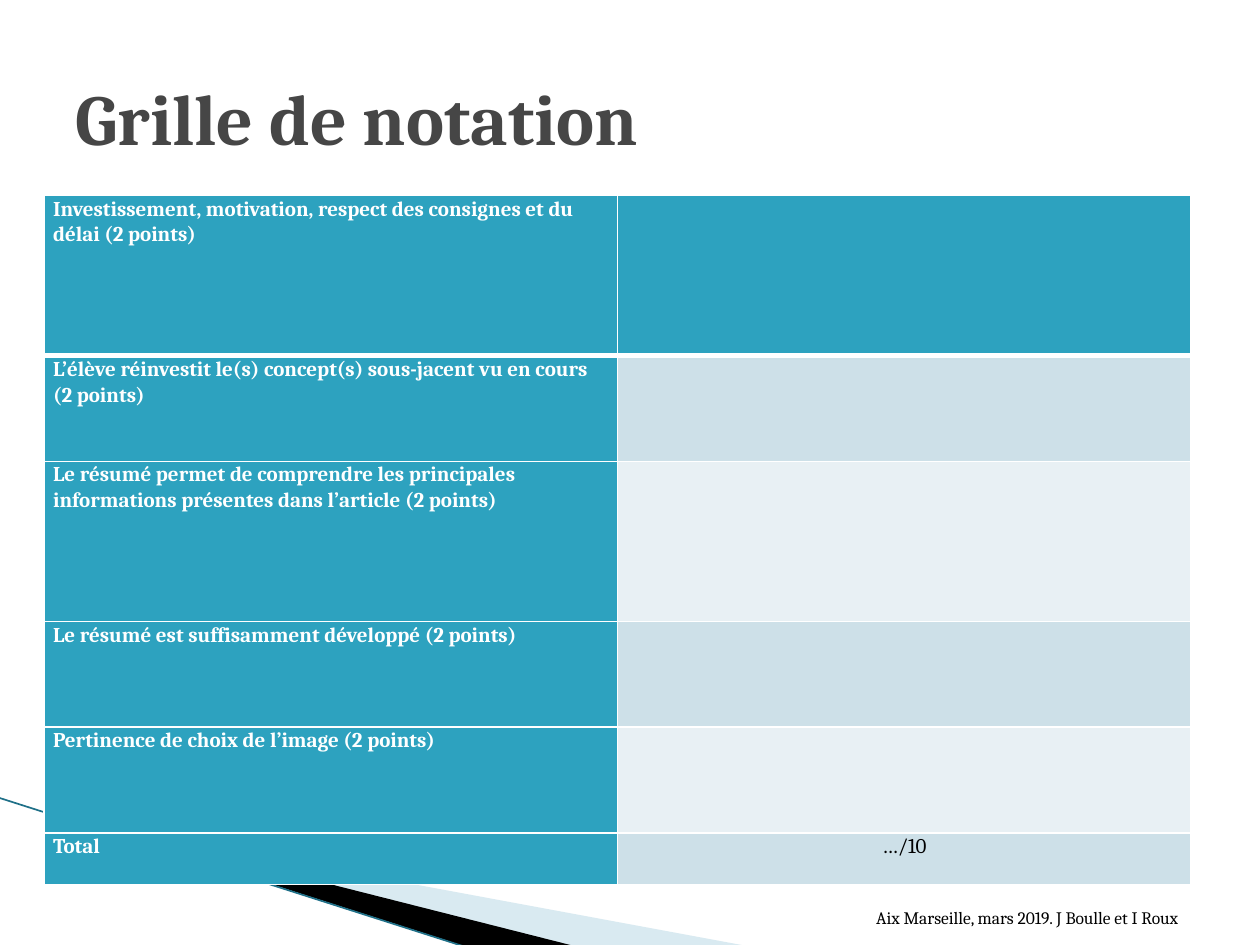
from lxml.etree import SubElement
from pptx import Presentation
from pptx.dml.color import RGBColor
from pptx.enum.shapes import MSO_CONNECTOR
from pptx.enum.text import MSO_ANCHOR, PP_ALIGN
from pptx.oxml.ns import qn
from pptx.util import Cm, Pt

WHITE, BLACK, TEAL = "FFFFFF", "000000", "2DA2BF"
BANDS = ["E8F0F4", "CDE0E8"]


def color(value):
    return RGBColor.from_string(value)


def write(frame, text, size, ink, bold=False, align=PP_ALIGN.LEFT,
          anchor=MSO_ANCHOR.TOP, spacing=None):
    frame.word_wrap = True
    frame.vertical_anchor = anchor
    para = frame.paragraphs[0]
    para.alignment = align
    para.line_spacing = spacing
    span = para.add_run()
    span.text = text
    span.font.name = "Cambria"
    span.font.size = Pt(size)
    span.font.bold = bold
    span.font.color.rgb = color(ink)


deck = Presentation()
deck.slide_width, deck.slide_height = Cm(25.4), Cm(19.05)
page = deck.slides.add_slide(deck.slide_layouts[5])

# Decorative wedges and line in the bottom left corner
wedges = [
    ("A0CBDC", 40, [(1.4, 16.54), (15.11, 19.08), (11.58, 19.08), (1.4, 16.51)]),
    (BLACK, 100, [(1.35, 16.48), (11.61, 19.08), (9.45, 19.1), (1.37, 16.51)]),
]
for fill, opacity, corners in wedges:
    points = [(Cm(x), Cm(y)) for x, y in corners]
    builder = page.shapes.build_freeform(*points[0])
    builder.add_line_segments(points[1:])
    wedge = builder.convert_to_shape()
    wedge.shadow.inherit = False
    wedge.line.fill.background()
    wedge.fill.solid()
    wedge.fill.fore_color.rgb = color(fill)
    if opacity < 100:
        tint = wedge.element.spPr.find(qn("a:solidFill"))[0]
        SubElement(tint, qn("a:alpha"), val=str(opacity * 1000))

edge = page.shapes.add_connector(
    MSO_CONNECTOR.STRAIGHT, Cm(-0.03), Cm(16.08), Cm(9.42), Cm(19.1))
edge.line.color.rgb = color("1F7088")
edge.line.width = Pt(0.95)
SubElement(edge.element.spPr, qn("a:effectLst"))

# Title and credit
title = page.shapes.title
title.left, title.top, title.width, title.height = Cm(1.27), Cm(0.76), Cm(22.86), Cm(3.18)
write(title.text_frame, "Grille de notation", 41, "464646", bold=True,
      anchor=MSO_ANCHOR.MIDDLE)

credit = page.shapes.add_textbox(Cm(16.08), Cm(17.81), Cm(7.92), Cm(1.02))
write(credit.text_frame, "Aix Marseille, mars 2019. J Boulle et I Roux", 10, BLACK,
      align=PP_ALIGN.RIGHT, anchor=MSO_ANCHOR.BOTTOM)

# Grading grid: criterion, score, row height
criteria = [
    ("Investissement, motivation, respect des consignes et du délai (2 points)", "", 3.23),
    ("L’élève réinvestit le(s) concept(s) sous-jacent vu en cours (2 points)", "", 2.13),
    ("Le résumé permet de comprendre les principales informations présentes "
     "dans l’article (2 points)", "", 3.23),
    ("Le résumé est suffisamment développé (2 points)", "", 2.13),
    ("Pertinence de choix de l’image (2 points)", "", 2.13),
    ("Total", "…/10", 1.04),
]
grid = page.shapes.add_table(
    len(criteria), 2, Cm(0.89), Cm(3.94), Cm(23.12), Cm(13.89)).table
for column in grid.columns:
    column.width = Cm(11.56)

for row, (criterion, score, height) in enumerate(criteria):
    grid.rows[row].height = Cm(height)
    for column, text in enumerate((criterion, score)):
        cell = grid.cell(row, column)
        cell.margin_left = cell.margin_right = Cm(0.18)
        cell.margin_top = cell.margin_bottom = 0
        properties = cell._tc.get_or_add_tcPr()
        for side in ("lnL", "lnR", "lnT", "lnB"):
            thick = (row, side) in ((0, "lnB"), (1, "lnT"))
            border = SubElement(properties, qn(f"a:{side}"), w=str(Pt(3 if thick else 1)))
            SubElement(SubElement(border, qn("a:solidFill")), qn("a:srgbClr"), val=WHITE)
        header = row == 0 or column == 0
        cell.fill.solid()
        cell.fill.fore_color.rgb = color(TEAL if header else BANDS[row % 2])
        if text:
            write(cell.text_frame, text, 12, WHITE if header else BLACK, bold=header,
                  align=PP_ALIGN.CENTER if column else PP_ALIGN.LEFT, spacing=1.07)

deck.save("out.pptx")
